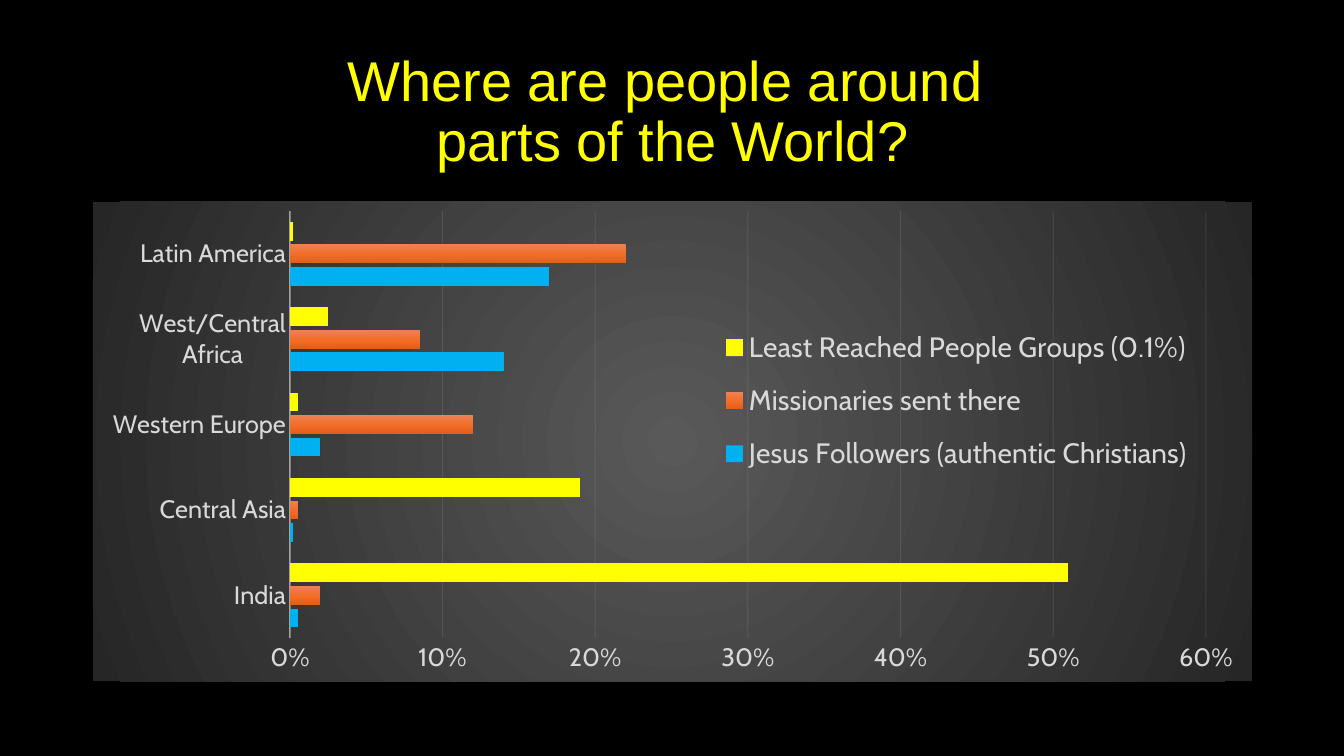
from pptx import Presentation, util as u
from pptx.chart.data import CategoryChartData
from pptx.dml.color import RGBColor
from pptx.enum import chart as ch, text
from pptx.oxml import parse_xml
from pptx.oxml.ns import nsdecls, qn

AREAS = ["India", "Central Asia", "Western Europe", "West/Central Africa", "Latin America"]
RADIAL = '<a:path path="circle"><a:fillToRect l="50000" t="50000" r="50000" b="50000"/></a:path>'
DOWN = '<a:lin ang="5400000" scaled="0"/>'
ORANGE = [(0, "ED8257"), (50, "F26E29"), (100, "E25F1A")]
GROUPS = [
    ("Jesus Followers (authentic Christians)", [0.005, 0.002, 0.02, 0.14, 0.17], "00B0F0"),
    ("Missionaries sent there", [0.02, 0.005, 0.12, 0.085, 0.22], ORANGE),
    ("Least Reached People Groups (0.1%)", [0.51, 0.19, 0.005, 0.025, 0.002], "FFFF00"),
]


def hue(code):
    return RGBColor.from_string(code)


def blend(stops, path):
    marks = "".join(
        f'<a:gs pos="{pos * 1000}"><a:srgbClr val="{code}"/></a:gs>' for pos, code in stops)
    return parse_xml(f'<a:gradFill {nsdecls("a")} rotWithShape="1">'
                     f'<a:gsLst>{marks}</a:gsLst>{path}</a:gradFill>')


def layout(x, y, w, h, inner=False):
    target = '<c:layoutTarget val="inner"/>' if inner else ""
    sizes = "".join(f'<c:{tag} val="{val}"/>' for tag, val in zip("xywh", (x, y, w, h)))
    return parse_xml(f'<c:layout {nsdecls("c")}><c:manualLayout>{target}'
                     f'<c:xMode val="edge"/><c:yMode val="edge"/>{sizes}'
                     '</c:manualLayout></c:layout>')


def drop(parent):
    for old in parent.findall(qn("c:layout")):
        parent.remove(old)


class Deck:
    """Holds the style and the current slide."""

    head, body = "Arial", "Cabin"
    pale, rule = "D9D9D9", "F2F2F2"

    def __init__(self):
        self.show = Presentation()
        self.show.slide_width, self.show.slide_height = u.Inches(13.33), u.Inches(7.5)
        self.slide = self.show.slides.add_slide(self.show.slide_layouts[5])
        fill = self.slide.background.fill
        fill.solid()
        fill.fore_color.rgb = hue("000000")

    def font(self, font, size, code, name):
        font.size, font.name = u.Pt(size), name
        font.color.rgb = hue(code)

    def line(self, line, width, alpha):
        line.width = u.Pt(width)
        line.color.rgb = hue(self.rule)
        tint = line.fill._xPr.find(".//" + qn("a:srgbClr"))
        tint.append(parse_xml(f'<a:alpha {nsdecls("a")} val="{alpha * 1000}"/>'))

    def title(self, words, x, y, w, h):
        box = self.slide.shapes.title
        box.left, box.top, box.width, box.height = map(u.Inches, (x, y, w, h))
        frame = box.text_frame
        frame.text = words
        frame.word_wrap = True
        frame.auto_size = text.MSO_AUTO_SIZE.NONE
        frame.vertical_anchor = text.MSO_ANCHOR.MIDDLE
        para = frame.paragraphs[0]
        para.alignment = text.PP_ALIGN.CENTER
        para.line_spacing = 0.9
        for run in para.runs:
            self.font(run.font, 40, "FFFF00", self.head)

    def bars(self, x, y, w, h):
        data = CategoryChartData(number_format="0%")
        data.categories = AREAS
        for name, vals, _ in GROUPS:
            data.add_series(name, vals)
        chart = self.slide.shapes.add_chart(
            ch.XL_CHART_TYPE.BAR_CLUSTERED, *map(u.Inches, (x, y, w, h)), data).chart
        self.font(chart.font, 10, "FFFFFF", self.body)
        chart.has_title = False
        plot = chart.plots[0]
        plot.gap_width, plot.overlap, plot.vary_by_categories = 115, -20, False
        for bar, (_, _, paint) in zip(plot.series, GROUPS):
            self.paint(bar, paint)
        self.axes(chart)
        self.legend(chart)
        root = chart._chartSpace
        back = parse_xml(f'<c:spPr {nsdecls("c", "a")}><a:ln><a:noFill/></a:ln></c:spPr>')
        back.insert(0, blend([(0, "595959"), (100, "262626")], RADIAL))
        root.find(qn("c:chart")).addnext(back)
        area = root.find(".//" + qn("c:plotArea"))
        drop(area)
        area.insert(0, layout(0.17, 0.02, 0.79, 0.89, True))

    def paint(self, bar, paint):
        bar.invert_if_negative = False
        fill = bar.format.fill
        if isinstance(paint, str):
            fill.solid()
            fill.fore_color.rgb = hue(paint)
        else:
            fill.gradient()
            old = bar._element.find(".//" + qn("a:gradFill"))
            old.getparent().replace(old, blend(paint, DOWN))

    def axes(self, chart):
        cat, val = chart.category_axis, chart.value_axis
        for axis in (cat, val):
            axis.major_tick_mark = axis.minor_tick_mark = ch.XL_TICK_MARK.NONE
            self.font(axis.tick_labels.font, 18, self.pale, self.body)
        self.line(cat.format.line, 1, 54)
        val.format.line.fill.background()
        val.minimum_scale, val.maximum_scale, val.major_unit = 0, 0.6, 0.1
        val.tick_labels.number_format = "0%"
        val.tick_labels.number_format_is_linked = False
        val.has_major_gridlines = True
        self.line(val.major_gridlines.format.line, 0.75, 10)

    def legend(self, chart):
        chart.has_legend = True
        key = chart.legend
        key.position = ch.XL_LEGEND_POSITION.RIGHT
        key.include_in_layout = True
        self.font(key.font, 20, self.pale, self.body)
        drop(key._element)
        spot = key._element.find(qn("c:legendPos"))
        spot.addnext(layout(0.53, 0.23, 0.43, 0.37))


def main():
    deck = Deck()
    deck.title("Where are people around \vparts of the World?", 0.92, 0.4, 11.5, 1.45)
    deck.bars(0.92, 2, 11.5, 4.76)
    deck.show.save("out.pptx")


if __name__ == "__main__":
    main()
